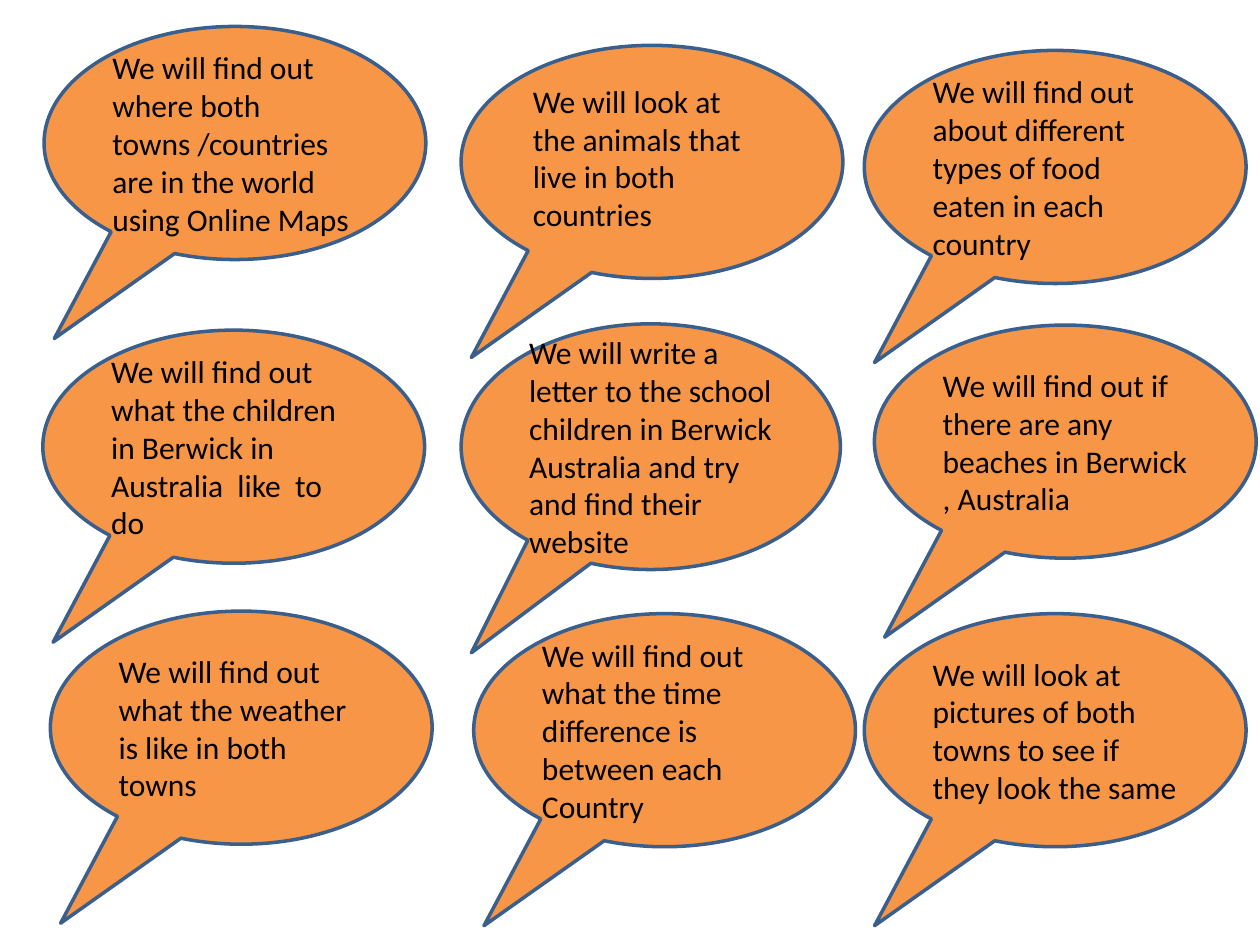
from pptx import Presentation
from pptx.dml.color import RGBColor
from pptx.enum.shapes import MSO_SHAPE
from pptx.enum.text import MSO_ANCHOR, PP_ALIGN
from pptx.util import Inches, Pt

CALLOUT = MSO_SHAPE.OVAL_CALLOUT
MIDDLE, TOP = MSO_ANCHOR.MIDDLE, MSO_ANCHOR.TOP
LEFT = PP_ALIGN.LEFT
BLANK_LAYOUT = 6

COLOURS = {"bubble": "F79646", "outline": "3A5F8C", "text": "000000"}
FONT = {"name": "Calibri", "size": Pt(18)}
TAIL = (-0.473, 0.839)

COLUMNS = (0.35, 3.66, 6.86)
ROWS = (0.4, 2.58, 4.87)
BUBBLE_SIZE = (3.03, 1.85)
ANIMALS_BOX = (4.13, 0.6, 2.05, 1.31)
ANIMALS_PLAN = "We will look at the animals that live in both countries"

# column, row, nudge right, nudge down, extra width, extra height, wording
BUBBLES = (
    (0, 0, 0, -0.19, 0, 0,
     "We will find out where both towns /countries are in the world using Online Maps"),
    (1, 0, 0, -0.04, 0, 0, ""),
    (2, 0, 0, 0, 0, 0,
     "We will find out about different types of food eaten in each country"),
    (0, 1, -0.01, 0.04, 0, 0,
     "We will find out what the children in Berwick in Australia  like  to do"),
    (1, 1, 0, -0.01, -0.02, 0.1,
     "We will write a letter to the school children in Berwick Australia "
     "and try and find their website"),
    (2, 1, 0.08, 0, 0, 0,
     "We will find out if there are any beaches in Berwick , Australia"),
    (0, 2, 0.05, -0.02, 0, 0,
     "We will find out what the weather is like in both towns"),
    (1, 2, 0.1, 0, 0, 0,
     "We will find out what the time difference is between each Country"),
    (2, 2, 0, 0, 0, 0,
     "We will look at pictures of both towns to see if they look the same"),
)


def colour(role):
    return RGBColor.from_string(COLOURS[role])


def write_plan(frame, wording, anchor):
    frame.word_wrap = True
    frame.vertical_anchor = anchor
    paragraph = frame.paragraphs[0]
    paragraph.alignment = LEFT
    plan = paragraph.add_run()
    plan.text = wording
    for attribute, value in FONT.items():
        setattr(plan.font, attribute, value)
    plan.font.color.rgb = colour("text")


def add_bubble(slide, left, top, width, height, wording):
    bubble = slide.shapes.add_shape(CALLOUT, *map(Inches, (left, top, width, height)))
    bubble.shadow.inherit = False
    bubble.fill.solid()
    bubble.fill.fore_color.rgb = colour("bubble")
    bubble.line.color.rgb = colour("outline")
    bubble.line.width = Pt(2)
    for index, share in enumerate(TAIL):
        bubble.adjustments[index] = share
    if wording:
        write_plan(bubble.text_frame, wording, MIDDLE)


def add_plan_text(slide, box, wording):
    plan_box = slide.shapes.add_textbox(*map(Inches, box))
    write_plan(plan_box.text_frame, wording, TOP)


def main():
    deck = Presentation()
    deck.slide_width, deck.slide_height = Inches(10), Inches(7.5)
    slide = deck.slides.add_slide(deck.slide_layouts[BLANK_LAYOUT])
    width, height = BUBBLE_SIZE
    for column, row, right, down, wider, taller, wording in BUBBLES:
        add_bubble(slide, COLUMNS[column] + right, ROWS[row] + down,
                   width + wider, height + taller, wording)
    add_plan_text(slide, ANIMALS_BOX, ANIMALS_PLAN)
    deck.save("out.pptx")


if __name__ == "__main__":
    main()
